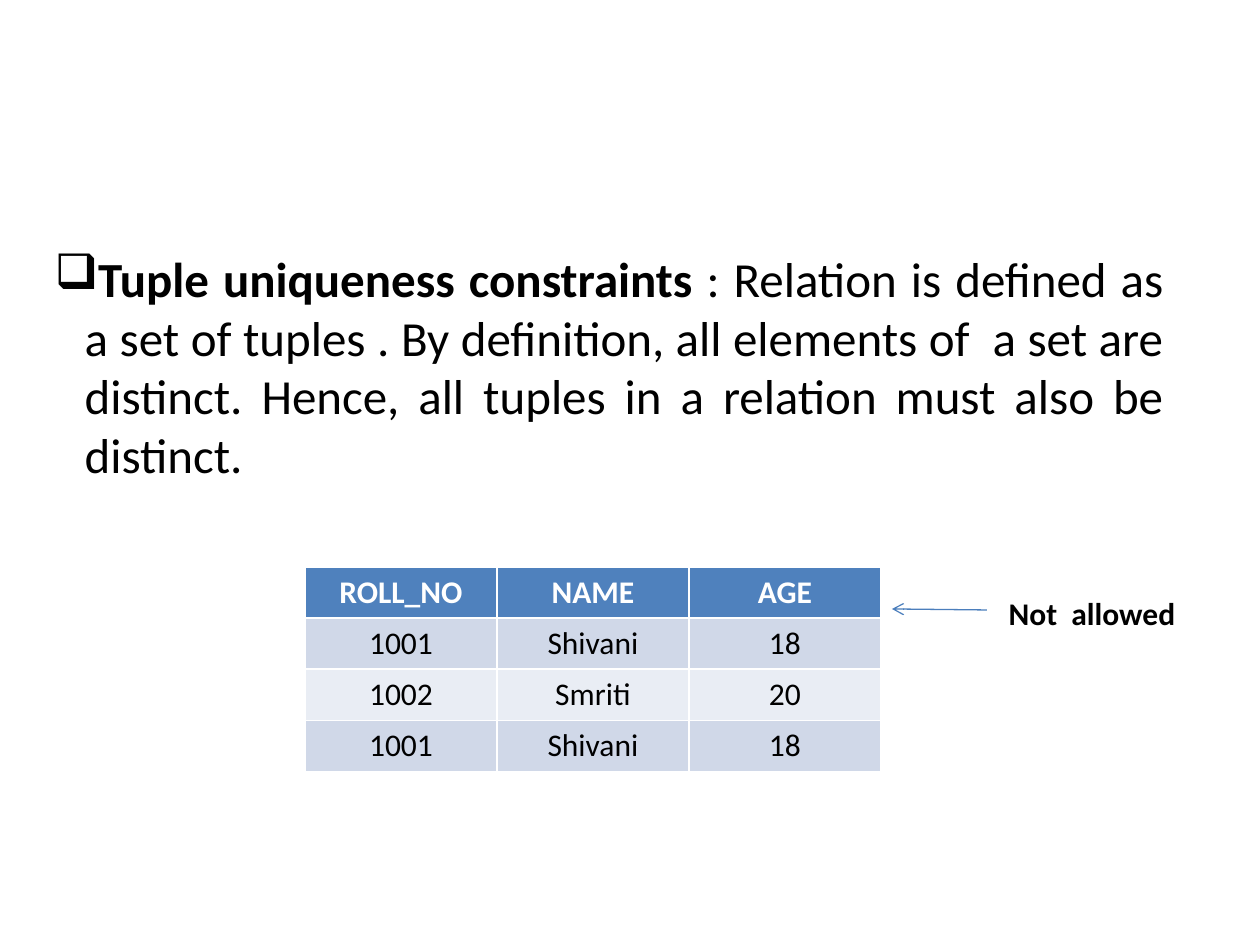
from lxml.etree import SubElement
from pptx import Presentation
from pptx.dml.color import RGBColor
from pptx.enum.shapes import MSO_CONNECTOR as Connector
from pptx.enum.text import MSO_ANCHOR as Anchor, MSO_AUTO_SIZE as AutoSize, PP_ALIGN as Align
from pptx.oxml.ns import qn
from pptx.util import Emu, Pt

COLORS = {
    "text": "000000",
    "header": "4F81BD",
    "header_text": "FFFFFF",
    "band_dark": "D0D8E8",
    "band_light": "E9EDF4",
    "arrow": "4B7EBC",
}
FORMATS = {
    "term": {"name": "Calibri", "size": Pt(28), "bold": True},
    "definition": {"name": "Calibri", "size": Pt(28), "bold": False},
    "strong": {"name": "Calibri", "size": Pt(18), "bold": True},
    "cell": {"name": "Calibri", "size": Pt(18), "bold": False},
}
TERM = "Tuple uniqueness constraints "
DEFINITION = (
    ": Relation is defined as a set of tuples . By definition, all elements of  a set are "
    "distinct. Hence, all tuples in a relation must also be distinct."
)
STUDENTS = [
    ["ROLL_NO", "NAME", "AGE"],
    ["1001", "Shivani", "18"],
    ["1002", "Smriti", "20"],
    ["1001", "Shivani", "18"],
]


def px(length):
    return Emu(round(length * 914400 / 126))


def color(name):
    return RGBColor.from_string(COLORS[name])


def apply(target, values):
    for name, value in values.items():
        setattr(target, name, value)


class SlideBuilder:
    def __init__(self, presentation):
        self.slide = presentation.slides.add_slide(presentation.slide_layouts[5])

    def run(self, paragraph, text, style, color_name="text"):
        run = paragraph.add_run()
        run.text = text
        apply(run.font, FORMATS[style])
        run.font.color.rgb = color(color_name)

    def title(self, left, top, width, height, parts, bullet, indent):
        title = self.slide.shapes.title
        apply(title, {"left": px(left), "top": px(top), "width": px(width), "height": px(height)})
        apply(title.text_frame, {
            "word_wrap": True, "auto_size": AutoSize.NONE, "vertical_anchor": Anchor.TOP,
        })
        statement = title.text_frame.paragraphs[0]
        statement.alignment = Align.JUSTIFY
        properties = statement._p.get_or_add_pPr()
        properties.set("marL", str(px(indent)))
        properties.set("indent", str(-px(indent)))
        SubElement(properties, qn("a:buChar")).set("char", bullet)
        for text, style in parts:
            self.run(statement, text, style)

    def table(self, left, top, column_width, row_height, rows):
        columns = len(rows[0])
        table = self.slide.shapes.add_table(
            len(rows), columns, px(left), px(top),
            px(column_width * columns), px(row_height * len(rows)),
        ).table
        for row_index, row in enumerate(rows):
            if row_index == 0:
                fill, style, text_color = "header", "strong", "header_text"
            else:
                fill = "band_dark" if row_index % 2 else "band_light"
                style, text_color = "cell", "text"
            for column_index, text in enumerate(row):
                cell = table.cell(row_index, column_index)
                cell.fill.solid()
                cell.fill.fore_color.rgb = color(fill)
                paragraph = cell.text_frame.paragraphs[0]
                paragraph.alignment = Align.CENTER
                self.run(paragraph, text, style, text_color)

    def label(self, left, top, width, height, text):
        label = self.slide.shapes.add_textbox(px(left), px(top), px(width), px(height))
        apply(label.text_frame, {"word_wrap": False, "auto_size": AutoSize.SHAPE_TO_FIT_TEXT})
        paragraph = label.text_frame.paragraphs[0]
        paragraph.alignment = Align.CENTER
        self.run(paragraph, text, "strong")

    def arrow(self, start, end):
        arrow = self.slide.shapes.add_connector(
            Connector.STRAIGHT, *(px(length) for length in (*start, *end))
        )
        arrow.line.color.rgb = color("arrow")
        arrow.line.width = Pt(0.75)
        SubElement(arrow.line._get_or_add_ln(), qn("a:tailEnd")).set("type", "arrow")
        SubElement(arrow._element.spPr, qn("a:effectLst"))


def main():
    presentation = Presentation()
    apply(presentation, {"slide_width": px(1260), "slide_height": px(945)})
    builder = SlideBuilder(presentation)
    builder.title(42, 242, 1134, 420, [(TERM, "term"), (DEFINITION, "definition")], "❑", 30)
    builder.table(305, 567, 192, 51, STUDENTS)
    builder.label(987, 588, 210, 51, "Not  allowed")
    builder.arrow((987, 610), (892, 609))
    presentation.save("out.pptx")


if __name__ == "__main__":
    main()
